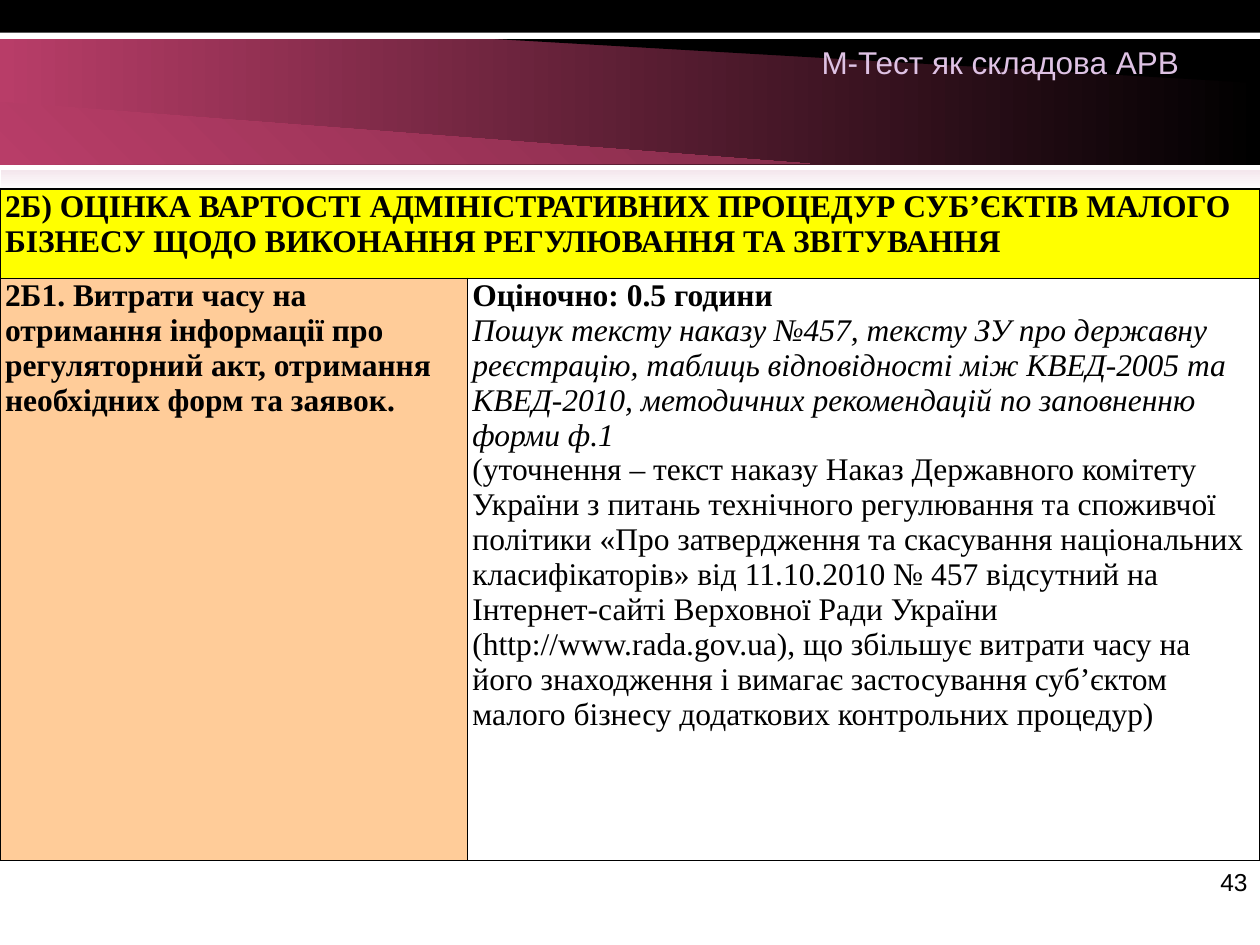
from pptx import Presentation
from pptx.dml.color import RGBColor
from pptx.enum.shapes import MSO_SHAPE
from pptx.enum.text import MSO_ANCHOR, PP_ALIGN
from pptx.oxml.ns import qn
from pptx.util import Inches, Pt
from lxml import etree

RECT = MSO_SHAPE.RECTANGLE
TOP = MSO_ANCHOR.TOP
LEFT, RIGHT = PP_ALIGN.LEFT, PP_ALIGN.RIGHT

INK = {
    "black": "000000", "white": "FFFFFF", "rose": "B83D68", "wine": "842C4A",
    "blush": "F4E7ED", "lilac": "DEC2E4", "yellow": "FFFF00", "peach": "FFCC99",
}
SANS, SERIF = "Arial", "Times New Roman"

HEAD = ("2Б) ОЦІНКА ВАРТОСТІ АДМІНІСТРАТИВНИХ ПРОЦЕДУР СУБ’ЄКТІВ МАЛОГО "
        "БІЗНЕСУ ЩОДО ВИКОНАННЯ РЕГУЛЮВАННЯ ТА ЗВІТУВАННЯ")
TASK = ("2Б1. Витрати часу на отримання інформації про регуляторний акт, "
        "отримання необхідних форм та заявок.")
COST = "Оціночно: 0.5 години"
HUNT = ("Пошук тексту наказу №457, тексту ЗУ про державну реєстрацію, таблиць "
        "відповідності між КВЕД-2005 та КВЕД-2010, методичних рекомендацій по "
        "заповненню форми ф.1")
NOTE = ("(уточнення – текст наказу Наказ Державного комітету України з питань "
        "технічного регулювання та споживчої політики «Про затвердження та "
        "скасування національних класифікаторів» від 11.10.2010 № 457 відсутний "
        "на Інтернет-сайті Верховної Ради України (http://www.rada.gov.ua), що "
        "збільшує витрати часу на його знаходження і вимагає застосування "
        "суб’єктом малого бізнесу додаткових контрольних процедур)")


def color(name):
    return RGBColor.from_string(INK[name])


def paint(shape, names, angle=0):
    shape.shadow.inherit = False
    shape.line.fill.background()
    fill = shape.fill
    if len(names) == 1:
        fill.solid()
        fill.fore_color.rgb = color(names[0])
        return
    fill.gradient()
    fill.gradient_angle = angle
    for stop, name in zip(fill.gradient_stops, names):
        stop.color.rgb = color(name)


def style(para, face, size, ink, bold=False, italic=False, align=LEFT):
    para.alignment = align
    for run in para.runs:
        font = run.font
        font.name, font.size = face, Pt(size)
        font.bold, font.italic = bold, italic
        font.color.rgb = color(ink)


def add_bar(slide, box, names, angle=0):
    bar = slide.shapes.add_shape(RECT, *map(Inches, box))
    paint(bar, names, angle)


def add_wedge(slide, box, points, names, angle=0):
    left, top = box[:2]
    spots = [(Inches(left + x), Inches(top + y)) for x, y in points]
    form = slide.shapes.build_freeform(*spots[0])
    form.add_line_segments(spots[1:])
    paint(form.convert_to_shape(), names, angle)


def add_banner(slide, box):
    left, top, width, height = box
    add_bar(slide, (left, top + 0.31, width, 1), ["rose", "black"])
    add_wedge(slide, (left + 3.93, top + 0.31),
              [(0, 0), (6.07, 0.35), (6.07, 0)], ["black"])
    add_wedge(slide, (left, top + 0.81),
              [(0, 0), (6.43, 0.49), (0, 0.49)], ["rose", "wine"], 45)
    add_bar(slide, (left, top, width, 0.26), ["black"])
    add_bar(slide, (left + 0.01, top + 1.35, width - 0.01, height - 1.35),
            ["blush", "white"], 270)


def add_title(slide, box):
    title = slide.shapes.title
    title.left, title.top, title.width, title.height = map(Inches, box)
    frame = title.text_frame
    frame.text = "М-Тест як складова АРВ"
    frame.word_wrap = False
    frame.vertical_anchor = TOP
    style(frame.paragraphs[0], SANS, 18, "lilac")
    slide.shapes.element.append(title.element)


def add_edges(cell, widths):
    props = cell._tc.get_or_add_tcPr()
    for side, width in zip("LRTB", widths):
        line = etree.SubElement(props, qn(f"a:ln{side}"), w=str(Pt(width)))
        fill = etree.SubElement(line, qn("a:solidFill"))
        etree.SubElement(fill, qn("a:srgbClr"), val=INK["black"])


def fill_cell(cell, parts, ink, widths):
    add_edges(cell, widths)
    if ink:
        cell.fill.solid()
        cell.fill.fore_color.rgb = color(ink)
    else:
        cell.fill.background()
    cell.margin_left = cell.margin_right = Inches(0.04)
    cell.margin_top = cell.margin_bottom = 0
    cell.vertical_anchor = TOP
    frame = cell.text_frame
    frame.text = "\n".join(text for text, _, _ in parts)
    for para, (_, bold, italic) in zip(frame.paragraphs, parts):
        style(para, SERIF, 18, "black", bold, italic)


def add_grid(slide, box):
    width, height = box[2:]
    grid = slide.shapes.add_table(2, 2, *map(Inches, box)).table
    for col, size in zip(grid.columns, (3.71, width - 3.71)):
        col.width = Inches(size)
    for row, size in zip(grid.rows, (0.71, height - 0.71)):
        row.height = Inches(size)
    fill_cell(grid.cell(0, 0), [(HEAD, True, False)], "yellow",
              (1.5, 1.5, 1.5, 1))
    fill_cell(grid.cell(0, 1), [], None, (1.5, 1.5, 1.5, 1))
    grid.cell(0, 0).merge(grid.cell(0, 1))
    fill_cell(grid.cell(1, 0), [(TASK, True, False)], "peach", (1.5, 1, 1, 1))
    fill_cell(grid.cell(1, 1),
              [(COST, True, False), (HUNT, False, True), (NOTE, False, False)],
              None, (1, 1.5, 1, 1))


def add_number(slide, box):
    frame = slide.shapes.add_textbox(*map(Inches, box)).text_frame
    frame.word_wrap = True
    frame.text = "43"
    style(frame.paragraphs[0], SANS, 14, "black", align=RIGHT)


def main():
    deck = Presentation()
    deck.slide_width, deck.slide_height = Inches(10), Inches(7.5)
    slide = deck.slides.add_slide(deck.slide_layouts[5])
    add_banner(slide, (0, 0, 10, 1.52))
    add_number(slide, (7.67, 6.83, 2.33, 0.52))
    add_grid(slide, (0, 1.5, 10, 5.33))
    add_title(slide, (6.42, 0.29, 3.07, 0.4))
    deck.save("out.pptx")


if __name__ == "__main__":
    main()
